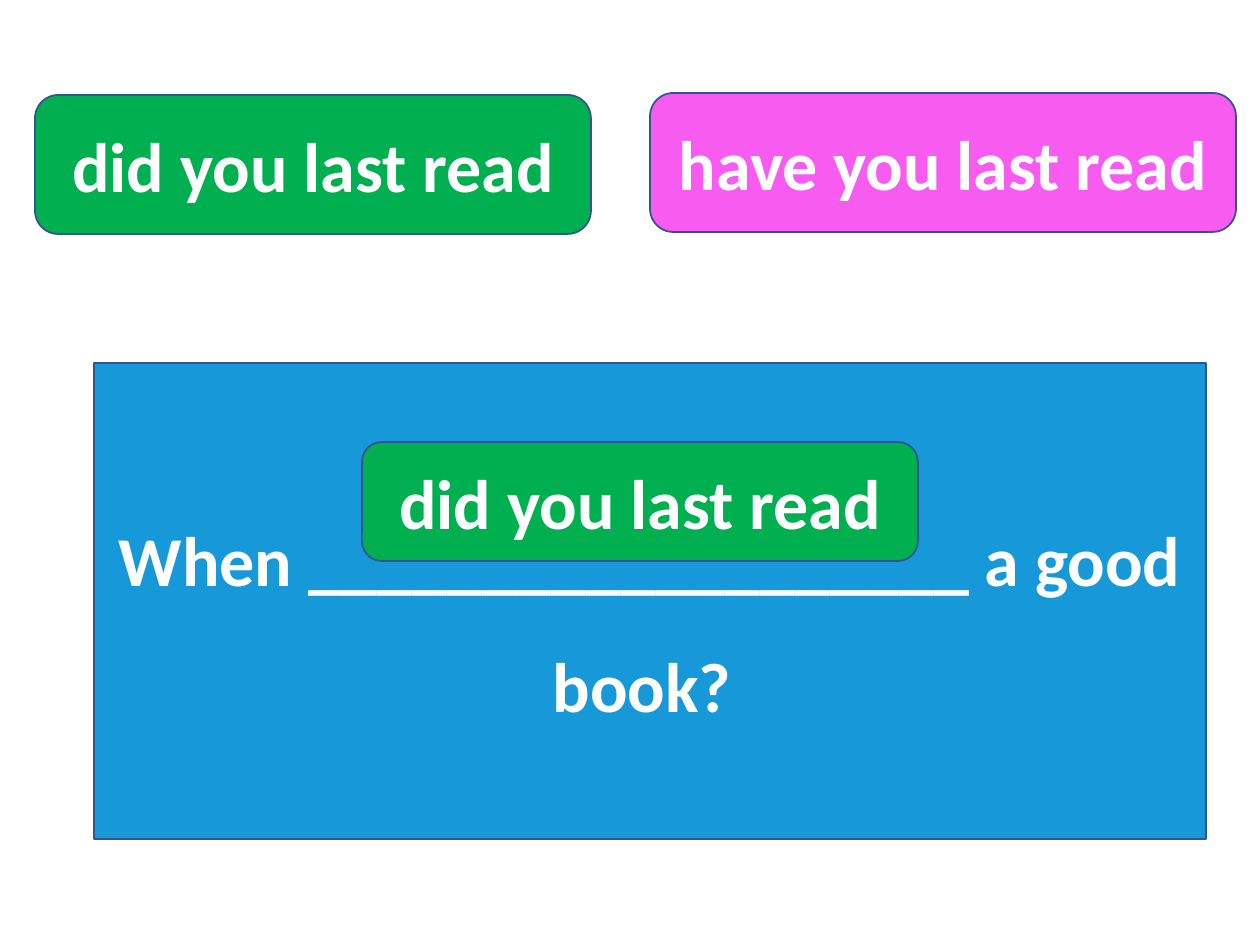
import pptx
import pptx.util
import pptx.dml.color
import pptx.enum.shapes
import pptx.enum.text
from dataclasses import dataclass

SCALE = 914400 / 126  # EMU per px
KIND = pptx.enum.shapes.MSO_SHAPE


@dataclass(frozen=True)
class Theme:
    green: str = "00B050"
    pink: str = "F75BF0"
    blue: str = "1798D9"
    edge: str = "325491"
    ink: str = "FFFFFF"
    font: str = "Calibri"
    size: int = 40
    line: int = 1


THEME = Theme()


def emu(px):
    return pptx.util.Emu(round(px * SCALE))


def rgb(code):
    return pptx.dml.color.RGBColor.from_string(code)


def panel(slide, kind, box, fill, text, space=None):
    """Add a filled shape with centred bold text."""
    shape = slide.shapes.add_shape(kind, *map(emu, box))
    shape.shadow.inherit = False
    shape.fill.solid()
    shape.fill.fore_color.rgb = rgb(fill)
    shape.line.color.rgb = rgb(THEME.edge)
    shape.line.width = pptx.util.Pt(THEME.line)

    frame = shape.text_frame
    frame.word_wrap = True
    frame.vertical_anchor = pptx.enum.text.MSO_ANCHOR.MIDDLE
    para = frame.paragraphs[0]
    para.alignment = pptx.enum.text.PP_ALIGN.CENTER
    if space:
        para.line_spacing = space
    run = para.add_run()
    run.text = text
    font = run.font
    font.name = THEME.font
    font.size = pptx.util.Pt(THEME.size)
    font.bold = True
    font.color.rgb = rgb(THEME.ink)


def card(slide, box, fill, text):
    panel(slide, KIND.ROUNDED_RECTANGLE, box, fill, text)


def choices(slide, box):
    """Place the two possible answers side by side."""
    left, top, width, height = box
    pink = 586
    card(slide, (left, top + 2, 556, height - 2), THEME.green, "did you last read")
    card(slide, (left + width - pink, top, pink, height - 2), THEME.pink, "have you last read")


def question(slide, box):
    """Place the sentence with the right answer over its gap."""
    left, top, width, height = box
    panel(slide, KIND.RECTANGLE, box, THEME.blue,
          "When ___________________ a good book? ", 1.5)
    card(slide, (left + 268, top + 79, 556, 119), THEME.green, "did you last read")


def main():
    deck = pptx.Presentation()
    deck.slide_width, deck.slide_height = emu(1260), emu(945)
    slide = deck.slides.add_slide(deck.slide_layouts[6])
    # Answers above, sentence below
    choices(slide, (35, 93, 1201, 141))
    question(slide, (94, 363, 1112, 476))
    deck.save("out.pptx")


if __name__ == "__main__":
    main()
